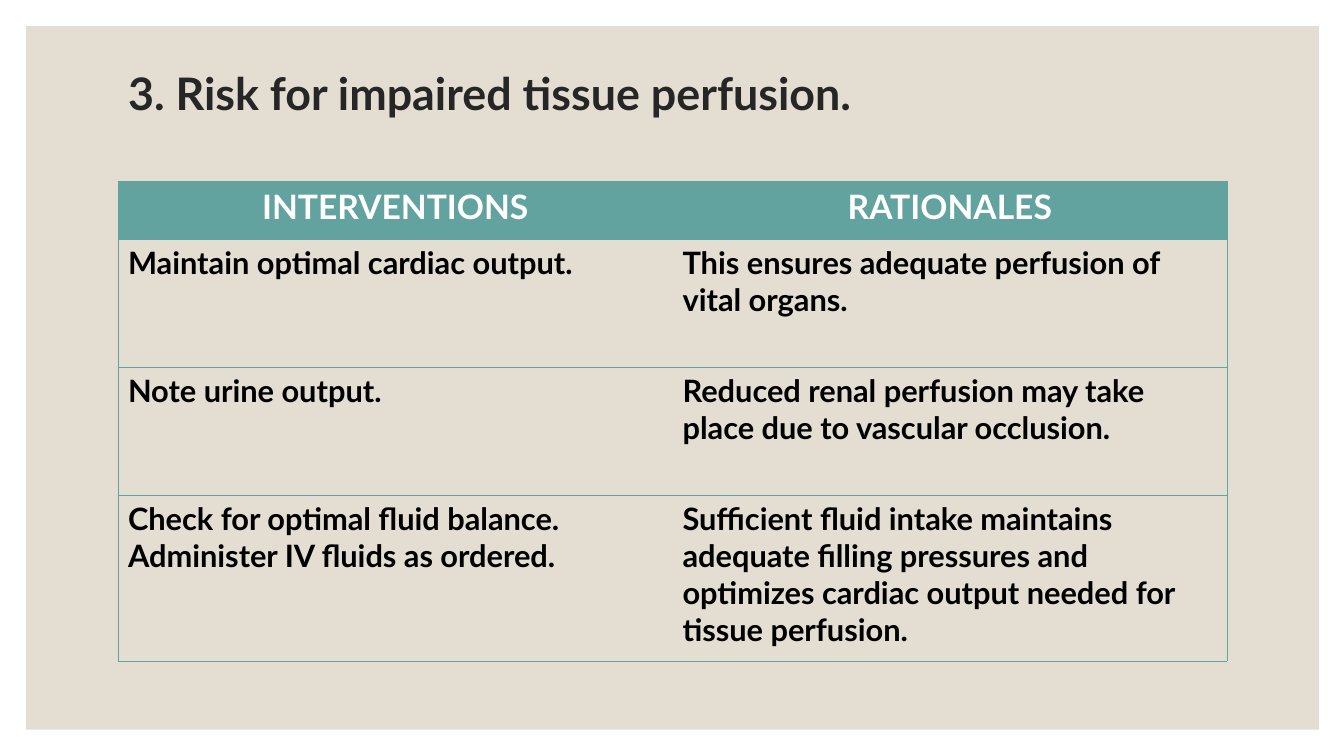
"""Build the tissue perfusion care plan slide."""
from lxml.etree import SubElement
from pptx import Presentation
from pptx.dml.color import RGBColor
from pptx.enum.shapes import MSO_SHAPE
from pptx.enum.text import MSO_ANCHOR, PP_ALIGN
from pptx.oxml.ns import qn
from pptx.util import Inches, Pt

COLORS = {"panel": "E3DED1", "title": "262626", "teal": "62A39F",
          "head": "FFFFFF", "body": "000000"}
ROWS = [
    ("INTERVENTIONS", "RATIONALES"),
    ("Maintain optimal cardiac output.",
     "This ensures adequate perfusion of vital organs."),
    ("Note urine output.",
     "Reduced renal perfusion may take place due to vascular occlusion."),
    ("Check for optimal fluid balance. Administer IV fluids as ordered.",
     "Sufficient fluid intake maintains adequate filling pressures and "
     "optimizes cardiac output needed for tissue perfusion."),
]
HEIGHTS = [0.57, 1.27, 1.27, 1.65]


def style(para, size, color, align):
    para.alignment = align
    para.font.name = "Lato"
    para.font.size = Pt(size)
    para.font.bold = True
    para.font.color.rgb = RGBColor.from_string(COLORS[color])


def border(cell, side, shown):
    line = SubElement(cell._tc.get_or_add_tcPr(), qn("a:ln" + side), w=str(Pt(0.5)))
    if shown:
        fill = SubElement(line, qn("a:solidFill"))
        SubElement(fill, qn("a:srgbClr"), val=COLORS["teal"])
    else:
        SubElement(line, qn("a:noFill"))


prs = Presentation()
prs.slide_width, prs.slide_height = Inches(13.33), Inches(7.5)
slide = prs.slides.add_slide(prs.slide_layouts[5])

title = slide.shapes.title
title.left, title.top = Inches(1.17), Inches(0.6)
title.width, title.height = Inches(11), Inches(0.71)
title.text_frame.text = "3. Risk for impaired tissue perfusion."
title.text_frame.vertical_anchor = MSO_ANCHOR.MIDDLE
title.text_frame.paragraphs[0].line_spacing = 0.9
style(title.text_frame.paragraphs[0], 32, "title", PP_ALIGN.LEFT)

panel = slide.shapes.add_shape(MSO_SHAPE.RECTANGLE, Inches(0.26), Inches(0.26),
                               Inches(12.82), Inches(6.98))
panel.shadow.inherit = False
panel.fill.solid()
panel.fill.fore_color.rgb = RGBColor.from_string(COLORS["panel"])
panel.line.fill.background()
title._element.addprevious(panel._element)

table = slide.shapes.add_table(len(ROWS), 2, Inches(1.17), Inches(1.8),
                               Inches(11), Inches(sum(HEIGHTS))).table
table.horz_banding = False
for r, (texts, height) in enumerate(zip(ROWS, HEIGHTS)):
    table.rows[r].height = Inches(height)
    for c, text in enumerate(texts):
        cell = table.cell(r, c)
        cell.text = text
        for side, shown in (("L", c == 0), ("R", c == 1), ("T", True), ("B", True)):
            border(cell, side, shown)
        para = cell.text_frame.paragraphs[0]
        if r == 0:
            cell.fill.solid()
            cell.fill.fore_color.rgb = RGBColor.from_string(COLORS["teal"])
            style(para, 24, "head", PP_ALIGN.CENTER)
        else:
            cell.fill.background()
            style(para, 22, "body", PP_ALIGN.LEFT)

prs.save("out.pptx")
